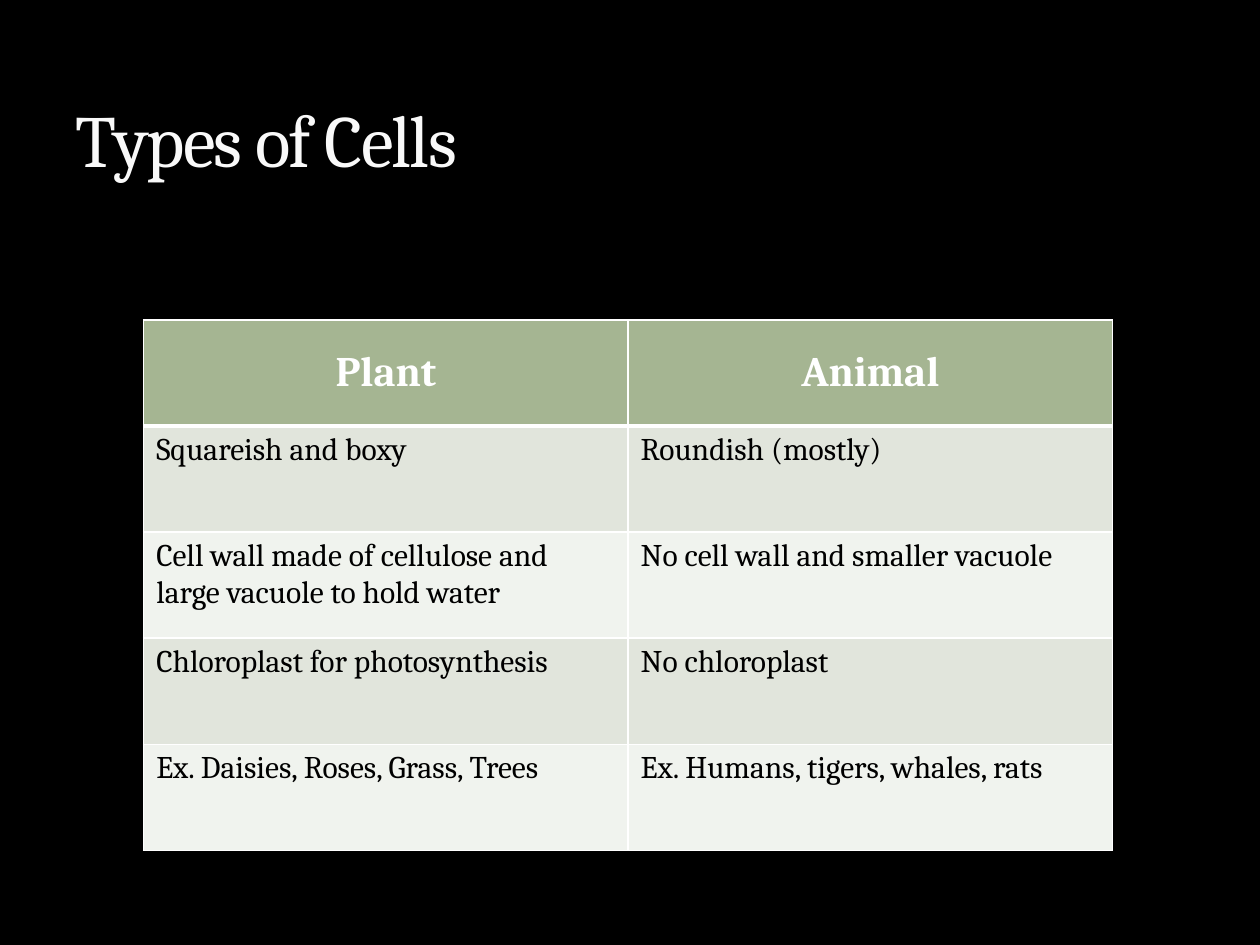
from lxml import etree
from pptx import Presentation
from pptx.dml.color import RGBColor
from pptx.enum import text
from pptx.oxml import ns
from pptx.util import Inches, Pt

FONT = "Cambria"
WHITE = "FFFFFF"
HEADER_FILL = "A5B592"
BAND_FILLS = ("E1E5DC", "F0F3EE")
HEADER_FORMAT = {"size": Pt(24), "bold": True}
BODY_FORMAT = {"size": Pt(18), "bold": False}
ROWS = [
    ("Plant", "Animal"),
    ("Squareish and boxy", "Roundish (mostly)"),
    ("Cell wall made of cellulose and large vacuole to hold water",
     "No cell wall and smaller vacuole"),
    ("Chloroplast for photosynthesis", "No chloroplast"),
    ("Ex. Daisies, Roses, Grass, Trees", "Ex. Humans, tigers, whales, rats"),
]


def color(value):
    return RGBColor.from_string(value)


def format_font(font, font_color, values):
    for name, value in {"name": FONT, **values}.items():
        setattr(font, name, value)
    font.color.rgb = color(font_color)


def set_borders(cell, widths):
    """Draw white cell borders; widths maps a side (L, R, T, B) to points."""
    properties = cell._tc.get_or_add_tcPr()
    for index, (side, width) in enumerate(widths.items()):
        line = etree.Element(ns.qn(f"a:ln{side}"), w=str(Pt(width)))
        fill = etree.SubElement(line, ns.qn("a:solidFill"))
        etree.SubElement(fill, ns.qn("a:srgbClr"), val=WHITE)
        properties.insert(index, line)


def add_title(slide, title_text):
    title = slide.shapes.title
    box = {"left": 0.5, "top": 0.17, "width": 9, "height": 1.33}
    for name, value in box.items():
        setattr(title, name, Inches(value))
    frame = title.text_frame
    frame.text = title_text
    frame.word_wrap = True
    frame.vertical_anchor = text.MSO_ANCHOR.BOTTOM
    paragraph = frame.paragraphs[0]
    paragraph.alignment = text.PP_ALIGN.LEFT
    run = paragraph.runs[0]
    format_font(run.font, "F9F9F9", {"size": Pt(42)})
    run.font._element.set("spc", "-100")


def fill_cell(cell, cell_text, row_index):
    is_header = row_index == 0
    cell.text = cell_text
    cell.fill.solid()
    fill = HEADER_FILL if is_header else BAND_FILLS[(row_index - 1) % 2]
    cell.fill.fore_color.rgb = color(fill)
    paragraph = cell.text_frame.paragraphs[0]
    font = paragraph.runs[0].font
    if is_header:
        cell.vertical_anchor = text.MSO_ANCHOR.MIDDLE
        paragraph.alignment = text.PP_ALIGN.CENTER
        format_font(font, WHITE, HEADER_FORMAT)
    else:
        format_font(font, "000000", BODY_FORMAT)
    set_borders(cell, {"L": 1, "R": 1,
                       "T": 3 if row_index == 1 else 1,
                       "B": 3 if is_header else 1})


def add_cell_table(slide):
    table = slide.shapes.add_table(
        len(ROWS), len(ROWS[0]),
        Inches(1.14), Inches(2.54), Inches(7.69), Inches(4.21)).table
    for row_index, row in enumerate(ROWS):
        for column_index, cell_text in enumerate(row):
            fill_cell(table.cell(row_index, column_index), cell_text, row_index)


def main():
    presentation = Presentation()
    presentation.slide_width = Inches(10)
    presentation.slide_height = Inches(7.5)
    slide = presentation.slides.add_slide(presentation.slide_layouts[5])
    slide.background.fill.solid()
    slide.background.fill.fore_color.rgb = color("000000")
    add_cell_table(slide)
    add_title(slide, "Types of Cells")
    presentation.save("out.pptx")


if __name__ == "__main__":
    main()
